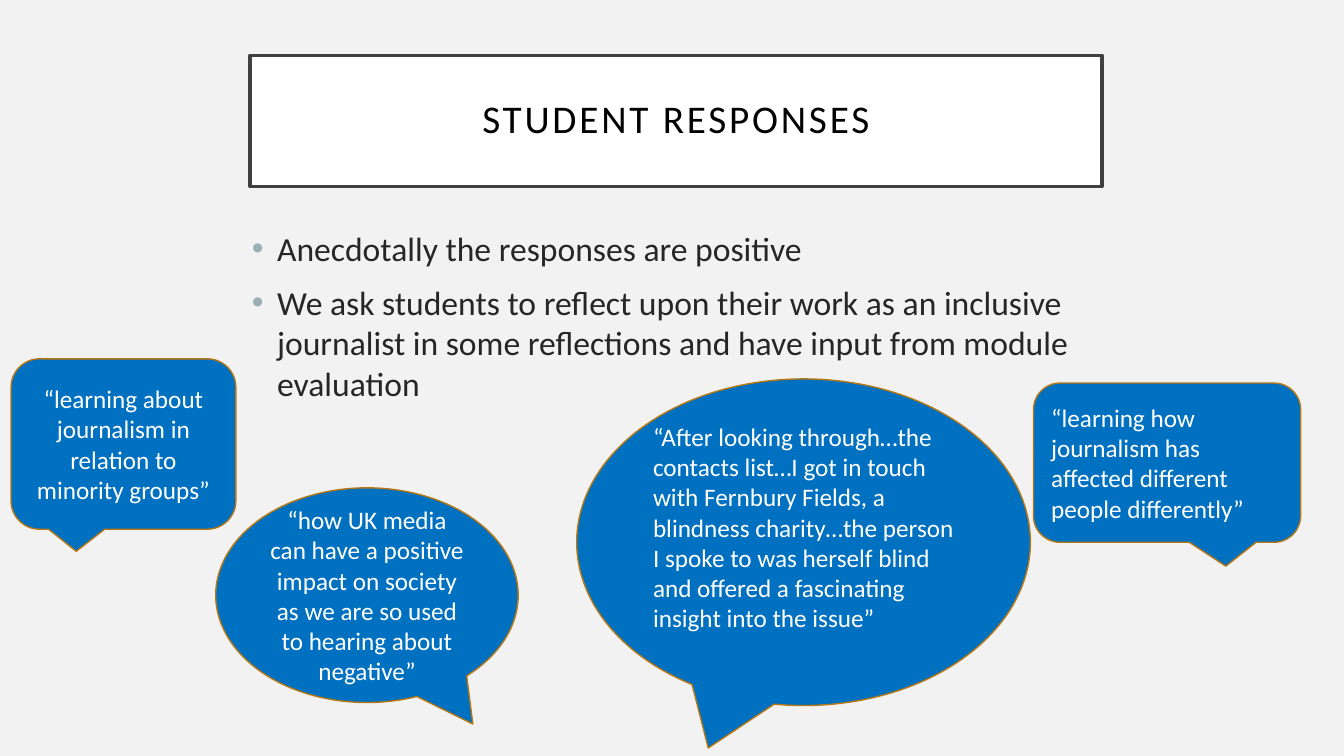
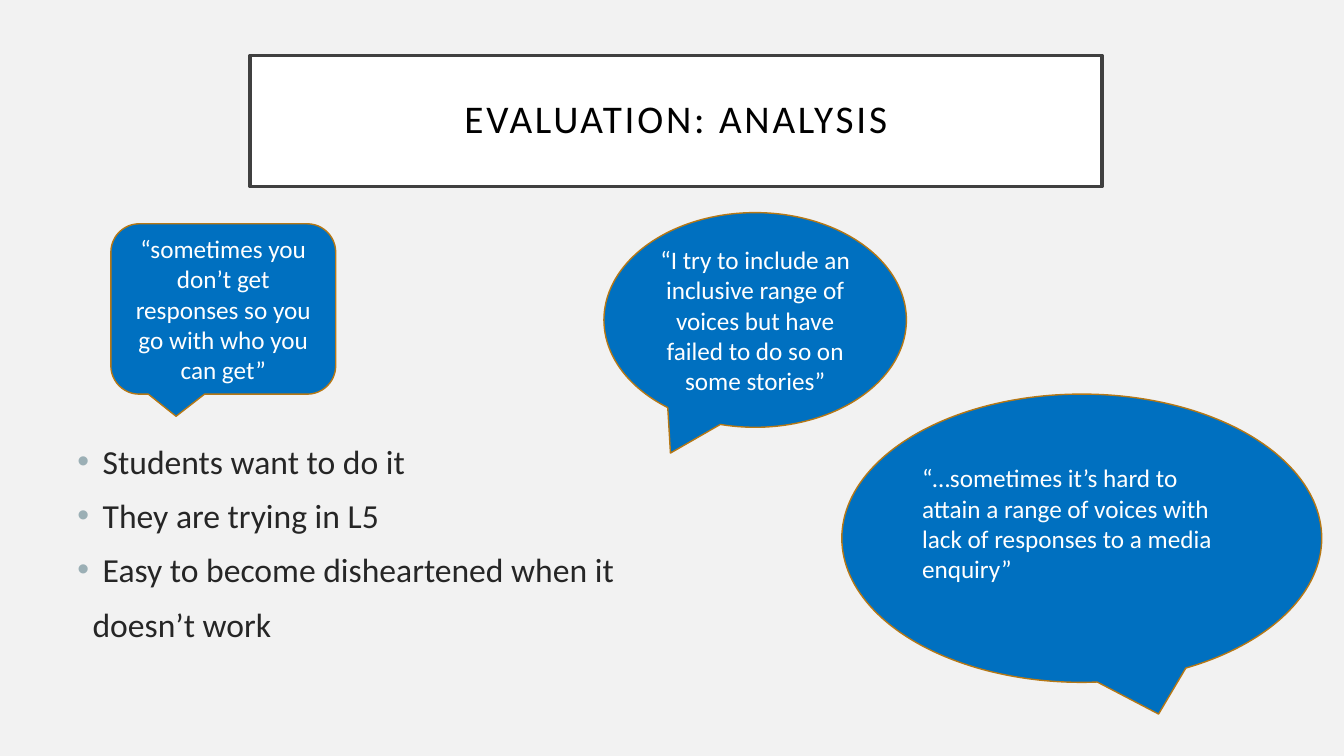
from pptx import Presentation, util as u
from pptx.dml.color import RGBColor
from pptx.enum import shapes, text
from pptx.oxml.ns import qn
from lxml import etree

PX = 9144  # EMU per px, 100 px to the inch
FONT = "Calibri"
PAPER, WHITE, BLACK = "F2F2F2", "FFFFFF", "000000"
FRAME, BODY, BULLET = "404040", "262626", "9BAFB5"
BUBBLE, BUBBLE_EDGE = "0070C0", "B67815"

SPEECH_BOX = shapes.MSO_SHAPE.ROUNDED_RECTANGULAR_CALLOUT
SPEECH_OVAL = shapes.MSO_SHAPE.OVAL_CALLOUT
CENTER, LEFT = text.PP_ALIGN.CENTER, text.PP_ALIGN.LEFT
DEFAULT_TAIL = (-0.21, 0.63)


def rgb(color):
    return RGBColor.from_string(color)


def px(*lengths):
    return [u.Emu(length * PX) for length in lengths]


def write(paragraph, words, size, color, align=LEFT):
    paragraph.text = words
    paragraph.alignment = align
    font = paragraph.font
    font.name, font.size = FONT, u.Pt(size)
    font.color.rgb = rgb(color)


def add_panel(slide, kind, box, fill, edge, edge_width):
    panel = slide.shapes.add_shape(kind, *px(*box))
    panel.shadow.inherit = False
    panel.fill.solid()
    panel.fill.fore_color.rgb = rgb(fill)
    panel.line.color.rgb = rgb(edge)
    panel.line.width = u.Pt(edge_width)
    panel.text_frame.word_wrap = True
    panel.text_frame.vertical_anchor = text.MSO_ANCHOR.MIDDLE
    return panel


def add_title(slide, words):
    banner = add_panel(slide, shapes.MSO_SHAPE.RECTANGLE, (248, 55, 845, 130),
                       WHITE, FRAME, 2.5)
    heading = banner.text_frame.paragraphs[0]
    write(heading, words, 28, BLACK, CENTER)
    heading.line_spacing = 0.9
    heading.runs[0]._r.get_or_add_rPr().set("spc", "200")


def add_quote(slide, kind, box, words, tail=DEFAULT_TAIL, align=CENTER, lift=0):
    """Speech bubble; tail is its tip from the centre, lift is extra bottom inset."""
    bubble = add_panel(slide, kind, box, BUBBLE, BUBBLE_EDGE, 1)
    for index, offset in enumerate(tail):
        bubble.adjustments[index] = offset
    frame = bubble.text_frame
    frame.margin_bottom = px(5 + lift)[0]
    write(frame.paragraphs[0], words, 18, WHITE, align)


def indent(paragraph, left, first=0):
    properties = paragraph._p.get_or_add_pPr()
    properties.set("marL", str(left * PX))
    properties.set("indent", str(first * PX))
    return properties


def add_bullet(paragraph):
    properties = indent(paragraph, 25, -25)
    tint = etree.SubElement(properties, qn("a:buClr"))
    etree.SubElement(tint, qn("a:srgbClr"), val=BULLET)
    etree.SubElement(properties, qn("a:buFont"), typeface="Arial")
    etree.SubElement(properties, qn("a:buChar"), char="•")


def add_points(slide, box, points, closing=None):
    """Bulleted points, then an optional closing line without a bullet."""
    frame = slide.shapes.add_textbox(*px(*box)).text_frame
    frame.word_wrap = True
    lines = points + ([closing] if closing else [])
    for index, words in enumerate(lines):
        paragraph = frame.add_paragraph() if index else frame.paragraphs[0]
        write(paragraph, words, 24, BODY)
        paragraph.space_before = u.Pt(10)
        if index < len(points):
            add_bullet(paragraph)
        else:
            indent(paragraph, 15)


def build_responses(slide):
    add_title(slide, "STUDENT RESPONSES")
    add_points(slide, (240, 221, 845, 213), [
        "Anecdotally the responses are positive",
        "We ask students to reflect upon their work as an inclusive journalist "
        "in some reflections and have input from module evaluation",
    ])
    add_quote(slide, SPEECH_BOX, (11, 356, 223, 169),
              "“learning about journalism in relation to minority groups”")
    add_quote(slide, SPEECH_OVAL, (214, 484, 300, 213),
              "“how UK media can have a positive impact on society as we are so "
              "used to hearing about negative”", tail=(0.35, 0.6))
    add_quote(slide, SPEECH_OVAL, (572, 376, 450, 324),
              "“After looking through…the contacts list…I got in touch with "
              "Fernbury Fields, a blindness charity…the person I spoke to was "
              "herself blind and offered a fascinating insight into the issue”",
              align=LEFT, lift=30)
    add_quote(slide, SPEECH_BOX, (1025, 380, 265, 158),
              "“learning how journalism has affected different people differently”",
              tail=(0.22, 0.65), align=LEFT)


def build_analysis(slide):
    add_title(slide, "EVALUATION: ANALYSIS")
    add_quote(slide, SPEECH_BOX, (110, 222, 223, 169),
              "“sometimes you don’t get responses so you go with who you can get”")
    add_points(slide, (67, 432, 945, 221), [
        "Students want to do it",
        "They are trying in L5",
        "Easy to become disheartened when it",
    ], closing="doesn’t work")
    add_quote(slide, SPEECH_OVAL, (599, 211, 300, 213),
              "“I try to include an inclusive range of voices but have failed to "
              "do so on some stories”", tail=(-0.28, 0.62))
    add_quote(slide, SPEECH_OVAL, (835, 391, 476, 286),
              "“…sometimes it’s hard to attain a range of voices with lack of "
              "responses to a media enquiry”",
              tail=(0.16, 0.61), align=LEFT, lift=30)


def main():
    deck = Presentation()
    deck.slide_width, deck.slide_height = px(1333, 750)
    backdrop = deck.slide_master.background.fill
    backdrop.solid()
    backdrop.fore_color.rgb = rgb(PAPER)
    blank = deck.slide_layouts[6]
    for build in (build_responses, build_analysis):
        build(deck.slides.add_slide(blank))
    deck.save("out.pptx")


if __name__ == "__main__":
    main()
